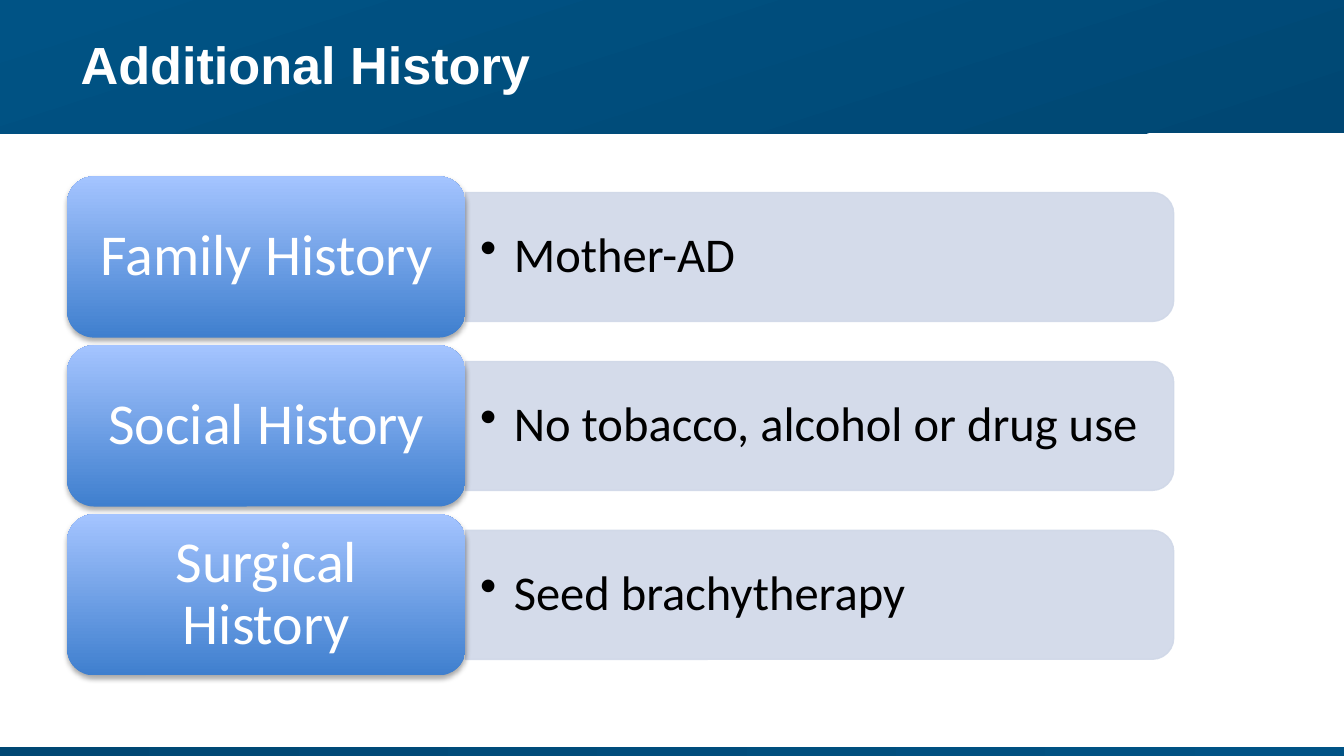
from pptx import Presentation
from pptx.dml.color import RGBColor
from pptx.enum.shapes import MSO_SHAPE
from pptx.enum.text import MSO_ANCHOR, PP_ALIGN
from pptx.oxml import parse_xml
from pptx.oxml.ns import nsdecls, qn
from pptx.util import Pt

RECT = MSO_SHAPE.RECTANGLE
ROUND = MSO_SHAPE.ROUNDED_RECTANGLE
TAB = MSO_SHAPE.ROUND_2_SAME_RECTANGLE
MIDDLE = MSO_ANCHOR.MIDDLE
LEFT, CENTER = PP_ALIGN.LEFT, PP_ALIGN.CENTER

WIDTH, HEIGHT = 720, 405
NAVY, BLUE = "004773", "005385"
LABEL_X, LABEL_W, LABEL_H = 36, 213.4, 86.4
PANEL_X, PANEL_W, PANEL_H = 249.4, 379.4, 69.1
FIRST_MID, PITCH = 137.7, 90.5
ROWS = [
    ("Family History", "Mother-AD"),
    ("Social History", "No tobacco, alcohol or drug use"),
    ("Surgical History", "Seed brachytherapy"),
]


def color(value):
    """Turn a hex string into a colour."""
    return RGBColor.from_string(value)


def add_shape(slide, kind, x, y, w, h):
    """Add a preset shape without line or shadow."""
    shape = slide.shapes.add_shape(kind, Pt(x), Pt(y), Pt(w), Pt(h))
    shape.shadow.inherit = False
    shape.line.fill.background()
    return shape


def blend(shape, start, end, angle):
    """Fill a shape with a two-colour gradient."""
    shape.fill.gradient()
    shape.fill.gradient_angle = angle
    for stop, value in zip(shape.fill.gradient_stops, (start, end)):
        stop.color.rgb = color(value)


def fade(shape, percent):
    """Set the opacity of the solid fill and line."""
    for tint in shape.element.spPr.iter(qn("a:srgbClr")):
        tint.append(parse_xml(f'<a:alpha {nsdecls("a")} val="{percent * 1000}"/>'))


def cast(shape):
    """Give a shape a soft shadow below it."""
    shade = parse_xml(
        f'<a:outerShdw {nsdecls("a")} blurRad="{Pt(3.1)}" dist="{Pt(1.8)}" '
        'dir="5400000" rotWithShape="0"><a:srgbClr val="000000">'
        '<a:alpha val="35000"/></a:srgbClr></a:outerShdw>')
    shape.element.spPr.find(qn("a:effectLst")).append(shade)


def bullet(para):
    """Give a paragraph a hanging bullet."""
    props = para._p.get_or_add_pPr()
    props.set("marL", str(Pt(18)))
    props.set("indent", str(Pt(-18)))
    props.append(parse_xml(f'<a:buChar {nsdecls("a")} char="•"/>'))


def write(shape, text, size, tint, align, pad, face="Calibri", bold=False, dot=False):
    """Write one styled paragraph, centred in height."""
    frame = shape.text_frame
    frame.word_wrap = True
    frame.vertical_anchor = MIDDLE
    frame.margin_left = frame.margin_right = Pt(pad)
    frame.margin_top = frame.margin_bottom = Pt(3.6)
    frame.text = text
    para = frame.paragraphs[0]
    if dot:
        bullet(para)
    para.alignment = align
    para.line_spacing = 0.9
    para.font.name = face
    para.font.size = Pt(size)
    para.font.bold = bold
    para.font.color.rgb = color(tint)


def add_title(slide, text):
    """Place the title in front of the header band."""
    title = slide.shapes.title
    title.left, title.top = Pt(36), Pt(0.7)
    title.width, title.height = Pt(648), Pt(71.3)
    write(title, text, 28, "FFFFFF", LEFT, 7.2, face="Arial", bold=True)
    title.element.getparent().append(title.element)


def add_panel(slide, mid, text):
    """Add a pale panel, turned on its side, with a bullet."""
    center = PANEL_X + PANEL_W / 2
    panel = add_shape(slide, TAB, center - PANEL_H / 2, mid - PANEL_W / 2, PANEL_H, PANEL_W)
    panel.rotation = 90
    panel.fill.solid()
    panel.fill.fore_color.rgb = color("D0D8E8")
    panel.line.color.rgb = color("D0D8E8")
    panel.line.width = Pt(0.75)
    fade(panel, 90)
    box = slide.shapes.add_textbox(Pt(PANEL_X), Pt(mid - 31), Pt(376), Pt(62))
    write(box, text, 26, "000000", LEFT, 7.9, dot=True)


def add_label(slide, mid, text):
    """Add a blue label with a shadow."""
    label = add_shape(slide, ROUND, LABEL_X, mid - LABEL_H / 2, LABEL_W, LABEL_H)
    blend(label, "3F7FCE", "A4C4FF", 90)
    cast(label)
    write(label, text, 31, "FFFFFF", CENTER, 13.5)


def main():
    """Build the slide and save it."""
    deck = Presentation()
    deck.slide_width, deck.slide_height = Pt(WIDTH), Pt(HEIGHT)
    slide = deck.slides.add_slide(deck.slide_layouts[5])
    blend(add_shape(slide, RECT, 0, 0, WIDTH, 71.3), NAVY, BLUE, 108)
    blend(add_shape(slide, RECT, 0, 400, WIDTH, 5), NAVY, BLUE, 0)
    add_title(slide, "Additional History")
    for row, (name, note) in enumerate(ROWS):
        mid = FIRST_MID + row * PITCH
        add_panel(slide, mid, note)
        add_label(slide, mid, name)
    deck.save("out.pptx")


if __name__ == "__main__":
    main()
